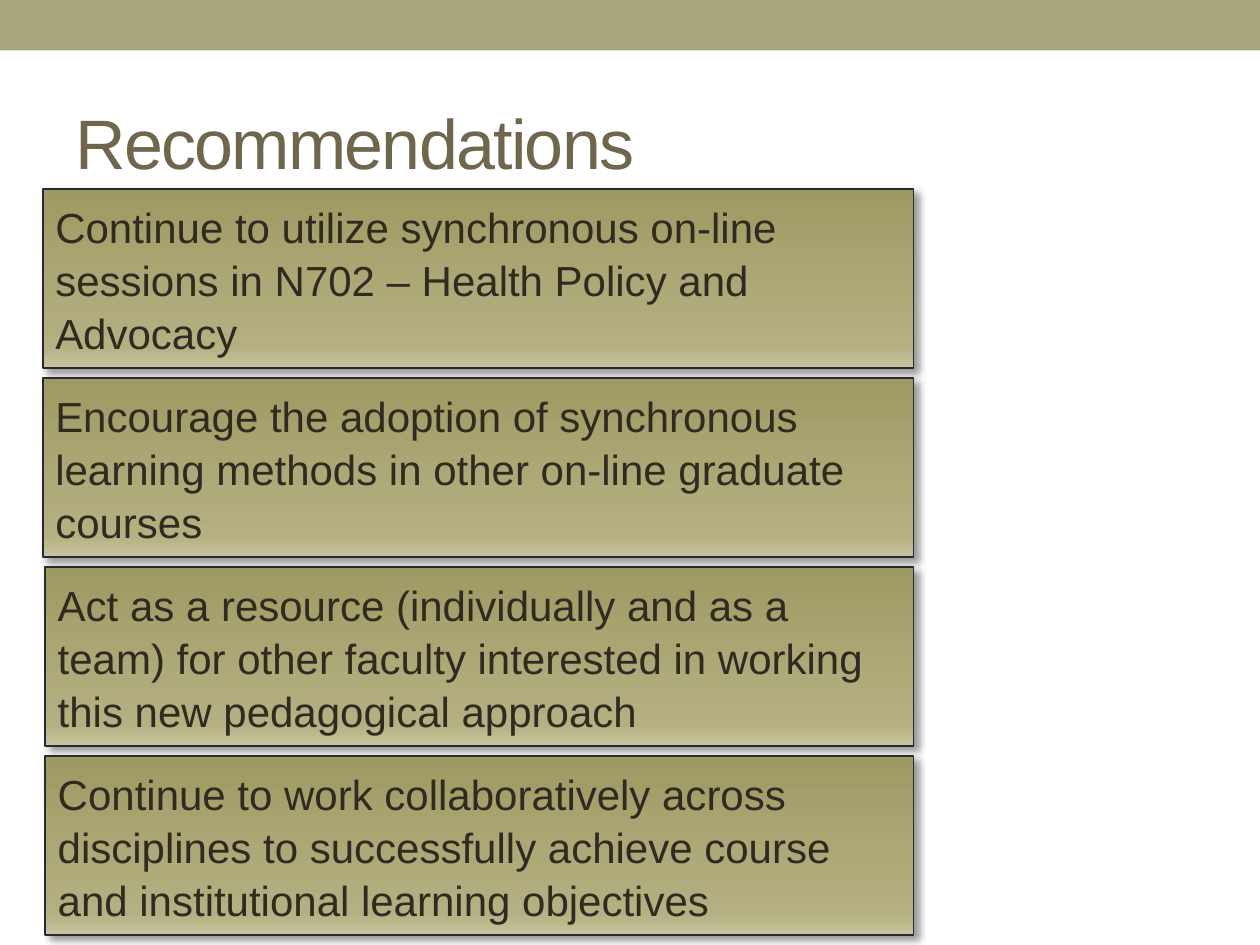
import pptx
import pptx.dml.color
import pptx.enum.shapes
import pptx.enum.text
import pptx.oxml
import pptx.oxml.ns
import pptx.util
from pptx.util import Inches

FONT = "Arial"
GRADIENT_STOPS = [(0, "C8C49D"), (12, "B5B082"), (100, "9F9A63")]
RECOMMENDATIONS = [
    (0.34, "Continue to utilize synchronous on-line sessions in N702 – Health Policy and Advocacy"),
    (0.34, "Encourage the adoption of synchronous learning methods in other on-line graduate courses"),
    (0.36, "Act as a resource (individually and as a team) for other faculty interested in working "
           "this new pedagogical approach"),
    (0.36, "Continue to work collaboratively across disciplines to successfully achieve course "
           "and institutional learning objectives"),
]


def color(value):
    return pptx.dml.color.RGBColor.from_string(value)


def write_text(shape, text, size, text_color):
    """Fill a shape with one left-aligned, vertically centred paragraph."""
    frame = shape.text_frame
    frame.word_wrap = True
    frame.vertical_anchor = pptx.enum.text.MSO_ANCHOR.MIDDLE
    paragraph = frame.paragraphs[0]
    paragraph.text = text
    paragraph.alignment = pptx.enum.text.PP_ALIGN.LEFT
    paragraph.font.name = FONT
    paragraph.font.size = pptx.util.Pt(size)
    paragraph.font.color.rgb = color(text_color)
    return paragraph


def add_rectangle(slide, left, top, width, height):
    shape = slide.shapes.add_shape(
        pptx.enum.shapes.MSO_SHAPE.RECTANGLE, left, top, width, height)
    shape.shadow.inherit = False
    return shape


def set_gradient(shape):
    """Three stops running from the bottom edge to the top."""
    shape.fill.gradient()
    shape.fill.gradient_angle = 90
    stop_list = shape.element.find(".//" + pptx.oxml.ns.qn("a:gsLst"))
    for stop in list(stop_list):
        stop_list.remove(stop)
    for position, value in GRADIENT_STOPS:
        stop_list.append(pptx.oxml.parse_xml(
            f'<a:gs {pptx.oxml.ns.nsdecls("a")} pos="{position * 1000}">'
            f'<a:srgbClr val="{value}"/></a:gs>'))


def set_shadow(shape):
    """Soft black shadow toward the lower right."""
    effects = shape.element.spPr.find(pptx.oxml.ns.qn("a:effectLst"))
    effects.append(pptx.oxml.parse_xml(
        f'<a:outerShdw {pptx.oxml.ns.nsdecls("a")} blurRad="{pptx.util.Pt(4)}" '
        f'dist="{pptx.util.Pt(3)}" dir="{45 * 60000}" algn="br" rotWithShape="0">'
        '<a:srgbClr val="000000"><a:alpha val="40000"/></a:srgbClr></a:outerShdw>'))


def add_top_band(slide, left, top, width, height):
    band = add_rectangle(slide, left, top, width, height)
    band.fill.solid()
    band.fill.fore_color.rgb = color("A9A57C")
    band.line.fill.background()


def add_title(slide, left, top, width, height):
    title = slide.shapes.add_textbox(left, top, width, height)
    paragraph = write_text(title, "Recommendations", 40, "6F664C")
    # Tighten the letters by one point
    paragraph.runs[0].font._element.set("spc", "-100")


def add_recommendation(slide, text, left, top, width, height):
    card = add_rectangle(slide, left, top, width, height)
    set_gradient(card)
    card.line.color.rgb = color("292934")
    card.line.width = pptx.util.Pt(1)
    set_shadow(card)
    paragraph = write_text(card, text, 24, "2F2B20")
    paragraph.line_spacing = 1.05


def add_recommendations(slide, top, right, height, pitch):
    for index, (left, text) in enumerate(RECOMMENDATIONS):
        add_recommendation(slide, text, Inches(left), top + index * pitch,
                           right - Inches(left), height)


def main():
    presentation = pptx.Presentation()
    presentation.slide_width = Inches(10)
    presentation.slide_height = Inches(7.5)
    slide = presentation.slides.add_slide(presentation.slide_layouts[6])
    add_top_band(slide, 0, 0, presentation.slide_width, Inches(0.4))
    add_title(slide, Inches(0.5), Inches(0.58), Inches(9), Inches(1.08))
    add_recommendations(slide, Inches(1.5), Inches(7.25), Inches(1.42), Inches(1.5))
    presentation.save("out.pptx")


if __name__ == "__main__":
    main()
